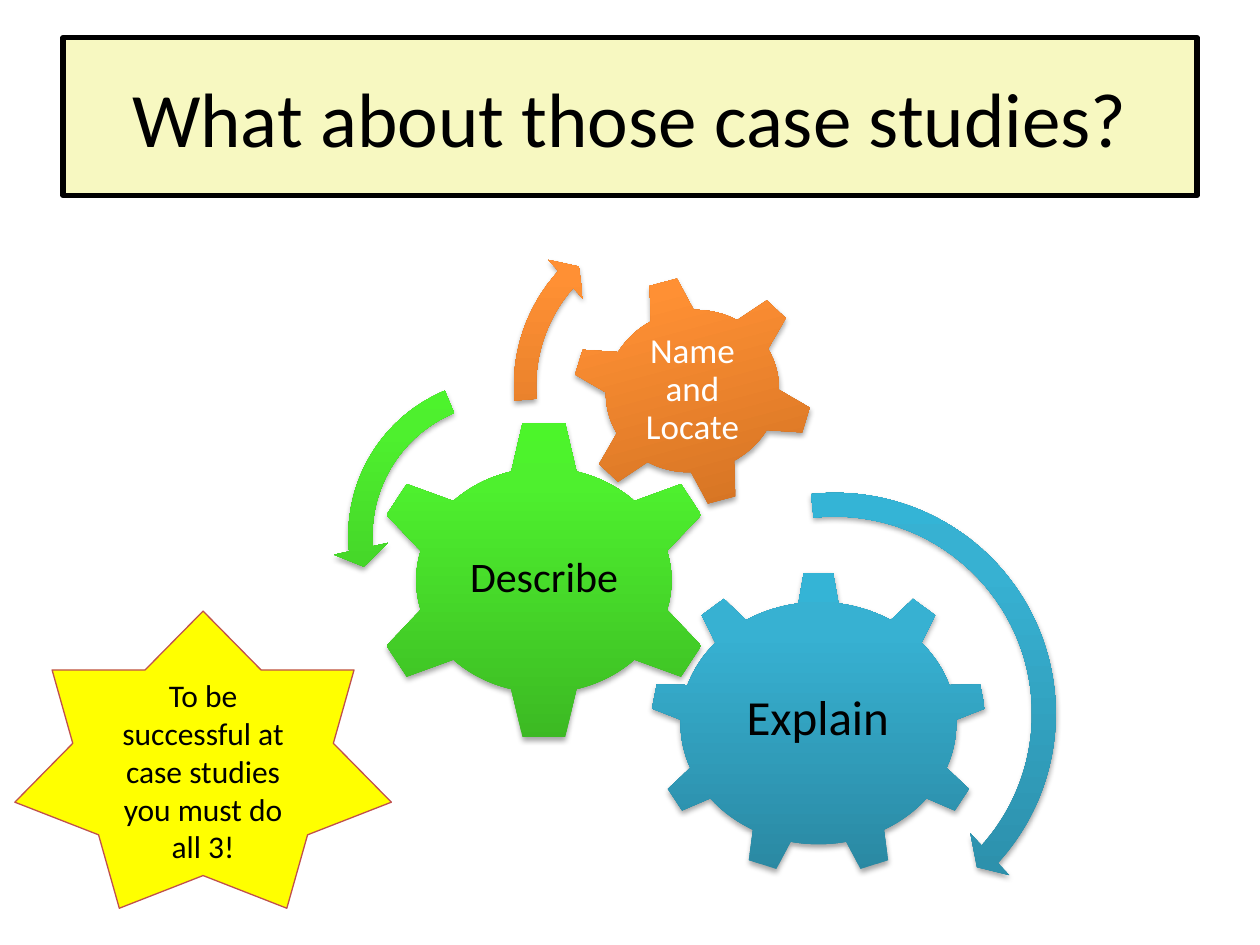
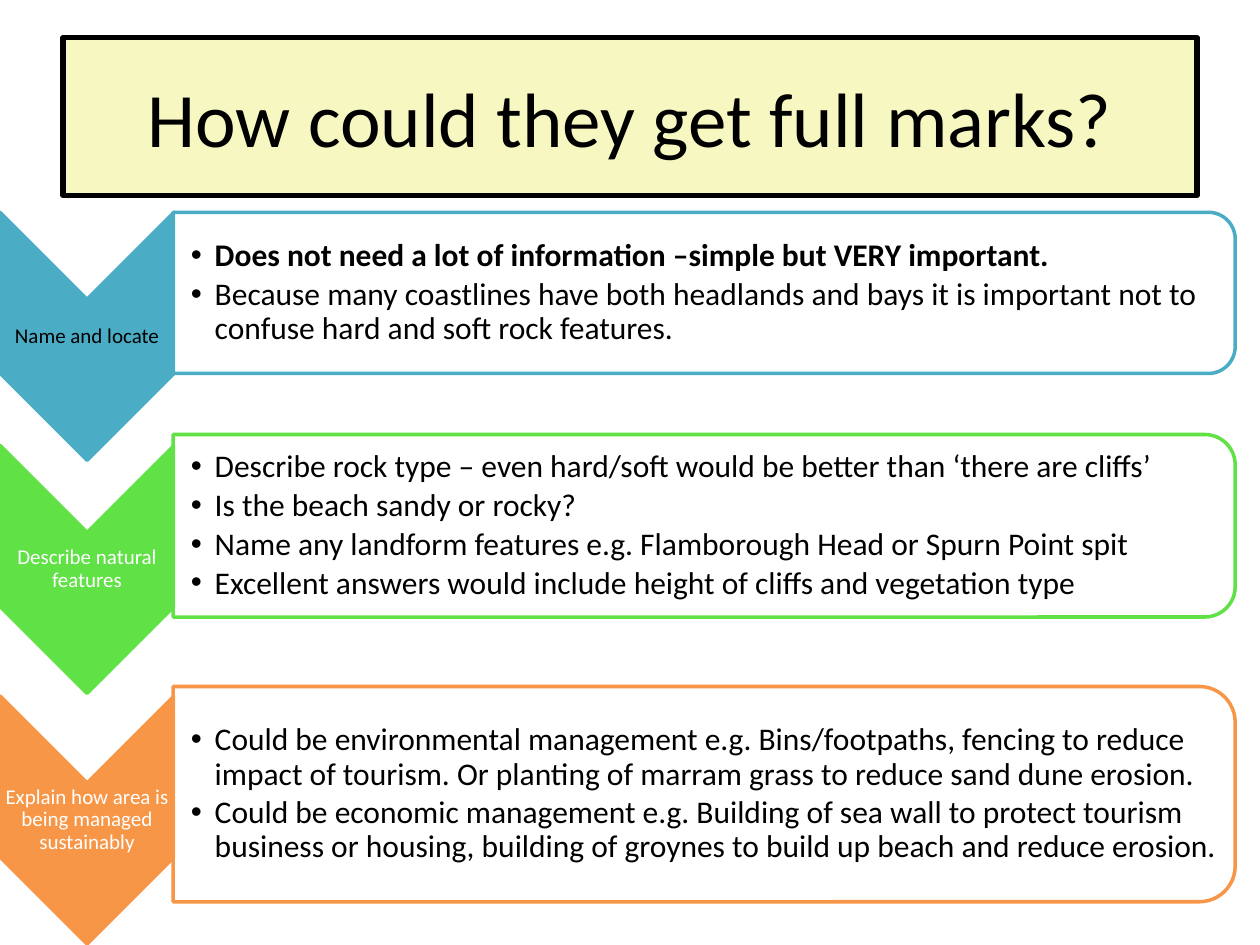
from copy import deepcopy

from pptx import Presentation
from pptx.dml.color import RGBColor
from pptx.enum.shapes import MSO_SHAPE
from pptx.enum.text import MSO_ANCHOR, PP_ALIGN
from pptx.oxml.ns import qn
from pptx.oxml.xmlchemy import OxmlElement
from pptx.util import Cm, Pt

BLACK = RGBColor(0x00, 0x00, 0x00)
WHITE = RGBColor(0xFF, 0xFF, 0xFF)
CREAM = RGBColor(0xF2, 0xF4, 0x96)
YELLOW = RGBColor(0xFF, 0xFF, 0x00)
RED = RGBColor(0xC0, 0x50, 0x4D)
TEAL = RGBColor(0x4B, 0xAC, 0xC6)
GREEN = RGBColor(0x60, 0xE1, 0x46)
ORANGE = RGBColor(0xF7, 0x96, 0x46)

# Gradients run from the bottom of a shape to its top
GRADIENT_POSITIONS = (0, 0.8, 1)
TEAL_SHADES = (RGBColor(0x2A, 0x88, 0xA2), RGBColor(0x37, 0xB1, 0xD2), RGBColor(0x34, 0xB4, 0xD6))
GREEN_SHADES = (RGBColor(0x3C, 0xB9, 0x23), RGBColor(0x4E, 0xF0, 0x2E), RGBColor(0x4C, 0xF5, 0x2A))
ORANGE_SHADES = (RGBColor(0xCC, 0x6E, 0x20), RGBColor(0xFF, 0x90, 0x34), RGBColor(0xFF, 0x91, 0x36))

FONT = "Calibri"
TITLE_BOX = (1.27, 0.76, 22.86, 3.18)
CHEVRON_WIDTH, CHEVRON_HEIGHT = 3.51, 5
LABEL_OFFSET, LABEL_HEIGHT = 1.75, 1.5
CARD_LEFT, CARD_WIDTH = 3.49, 21.41
LIST_WIDTH, LIST_INSET = 21.2, 0.18

# Gear shape, box, rotation, shades, label, label box, size, colour, inset
GEARS = [
    (MSO_SHAPE.GEAR_9, (13.11, 11.53, 6.78, 6.1), 0, TEAL_SHADES,
     "Explain", (14.4, 12.95, 4.17, 3.12), 28, BLACK, 0.1),
    (MSO_SHAPE.GEAR_6, (7.42, 8.46, 7.09, 6.48), 0, GREEN_SHADES,
     "Describe", (9.14, 10.08, 3.66, 3.2), 24, BLACK, 0.08),
    (MSO_SHAPE.GEAR_6, (11.51, 5.56, 4.9, 4.65), 345, ORANGE_SHADES,
     "Name and Locate", (12.6, 6.55, 2.72, 2.64), 20, WHITE, 0.08),
]

# Arrow shape, left, top, diameter, adjustments, shades
ARROWS = [
    (MSO_SHAPE.CIRCULAR_ARROW, 12.04, 9.6, 9.58, (0.05, 2.99, 25.31, 158.3, 0.06), TEAL_SHADES),
    (MSO_SHAPE.LEFT_CIRCULAR_ARROW, 6.71, 7.32, 6.96, (0.07, 4.3, 104.89, 148.38, 0.08), GREEN_SHADES),
    (MSO_SHAPE.CIRCULAR_ARROW, 10.06, 4.04, 7.49, (0.06, 3.94, 133.14, 105.08, 0.07), ORANGE_SHADES),
]

# Chevron top, card top, card height, colour, label, label colour, points as (text, bold)
STEPS = [
    (4.28, 4.28, 3.25, TEAL, "Name and locate", BLACK, [
        ("Does not need a lot of information –simple but VERY important.", True),
        ("Because many coastlines have both headlands and bays it is important "
         "not to confuse hard and soft rock features.", False),
    ]),
    (8.98, 8.76, 3.68, GREEN, "Describe natural features", WHITE, [
        ("Describe rock type – even hard/soft would be better than ‘there are cliffs’", False),
        ("Is the beach sandy or rocky?", False),
        ("Name any landform features e.g. Flamborough Head or Spurn Point spit", False),
        ("Excellent answers would include height of cliffs and vegetation type", False),
    ]),
    (14.03, 13.84, 4.34, ORANGE, "Explain how area is being managed sustainably", WHITE, [
        ("Could be environmental management e.g. Bins/footpaths, fencing to reduce impact "
         "of tourism. Or planting of marram grass to reduce sand dune erosion.", False),
        ("Could be economic management e.g. Building of sea wall to protect tourism business "
         "or housing, building of groynes to build up beach and reduce erosion.", False),
    ]),
]


def set_all(target, values):
    for name, value in values.items():
        setattr(target, name, value)


def add_child(parent, tag, **attributes):
    child = OxmlElement(tag)
    for name, value in attributes.items():
        child.set(name, str(value))
    parent.append(child)
    return child


def paint(shape, fill, line=None, width=0, opacity=100):
    shape.fill.solid()
    shape.fill.fore_color.rgb = fill
    if opacity < 100:
        colour = shape.element.spPr.find(qn("a:solidFill"))[0]
        add_child(colour, "a:alpha", val=opacity * 1000)
    if line is None:
        shape.line.fill.background()
    else:
        shape.line.color.rgb = line
        shape.line.width = Pt(width)


def paint_gradient(shape, shades):
    shape.fill.gradient()
    shape.fill.gradient_angle = 90
    stops = shape.element.spPr.find(".//" + qn("a:gsLst"))
    stops.insert(1, deepcopy(stops[0]))
    for stop, position, shade in zip(shape.fill.gradient_stops, GRADIENT_POSITIONS, shades):
        stop.position = position
        stop.color.rgb = shade
    shape.line.fill.background()


def add_soft_shadow(shape):
    effects = shape.element.spPr.find(qn("a:effectLst"))
    shadow = add_child(effects, "a:outerShdw", blurRad=Pt(3.1), dist=Pt(1.8),
                       dir=90 * 60000, rotWithShape=0)
    colour = add_child(shadow, "a:srgbClr", val=BLACK)
    add_child(colour, "a:alpha", val=35000)


def add_plain_shape(page, kind, box):
    shape = page.shapes.add_shape(kind, *map(Cm, box))
    shape.shadow.inherit = False
    return shape


def add_glossy_shape(page, kind, box, shades):
    shape = add_plain_shape(page, kind, box)
    paint_gradient(shape, shades)
    add_soft_shadow(shape)
    return shape


def add_turned_shape(page, kind, box):
    """Add a shape turned by 90 degrees that covers the given box."""
    left, top, width, height = box
    shift = (width - height) / 2
    shape = add_plain_shape(page, kind, (left + shift, top - shift, height, width))
    shape.rotation = 90
    return shape


def write(para, text, size, colour, bold=False):
    span = para.add_run()
    span.text = text
    set_all(span.font, {"name": FONT, "size": Pt(size), "bold": bold})
    span.font.color.rgb = colour


def space_lines(para, after_percent):
    para.line_spacing = 0.9
    after = add_child(para._p.get_or_add_pPr(), "a:spcAft")
    add_child(after, "a:spcPct", val=after_percent * 1000)


def add_text_frame(page, box, inset, left_inset=None):
    frame = page.shapes.add_textbox(*map(Cm, box)).text_frame
    set_all(frame, {
        "word_wrap": True,
        "vertical_anchor": MSO_ANCHOR.MIDDLE,
        "margin_left": Cm(left_inset or inset),
        "margin_top": Cm(inset),
        "margin_right": Cm(inset),
        "margin_bottom": Cm(inset),
    })
    return frame


def add_label(page, box, text, size, colour, inset):
    para = add_text_frame(page, box, inset).paragraphs[0]
    para.alignment = PP_ALIGN.CENTER
    space_lines(para, 35)
    write(para, text, size, colour)


def add_bullets(page, box, points):
    frame = add_text_frame(page, box, 0.03, left_inset=0.36)
    for index, (text, bold) in enumerate(points):
        para = frame.paragraphs[0] if index == 0 else frame.add_paragraph()
        para.level = 1
        space_lines(para, 15)
        properties = para._p.get_or_add_pPr()
        properties.set("marL", str(Cm(0.48)))
        properties.set("indent", str(-Cm(0.48)))
        add_child(properties, "a:buFont", typeface="Arial")
        add_child(properties, "a:buChar", char="•")
        write(para, text, 18, BLACK, bold)


def add_page(deck, title):
    page = deck.slides.add_slide(deck.slide_layouts[5])
    band = page.shapes.title
    set_all(band, dict(zip(("left", "top", "width", "height"), map(Cm, TITLE_BOX))))
    paint(band, CREAM, BLACK, 3, opacity=59)
    band.text_frame.vertical_anchor = MSO_ANCHOR.MIDDLE
    para = band.text_frame.paragraphs[0]
    para.alignment = PP_ALIGN.CENTER
    write(para, title, 44, BLACK)
    return page


def add_gear(page, kind, box, rotation, shades, text, text_box, size, colour, inset):
    add_glossy_shape(page, kind, box, shades).rotation = rotation
    add_label(page, text_box, text, size, colour, inset)


def add_round_arrow(page, kind, left, top, diameter, adjustments, shades):
    arrow = add_glossy_shape(page, kind, (left, top, diameter, diameter), shades)
    for index, value in enumerate(adjustments):
        arrow.adjustments[index] = value


def add_star(page, box, text):
    star = add_plain_shape(page, MSO_SHAPE.STAR_7_POINT, box)
    paint(star, YELLOW, RED, 0.75)
    star.text_frame.word_wrap = True
    star.text_frame.vertical_anchor = MSO_ANCHOR.TOP
    para = star.text_frame.paragraphs[0]
    para.alignment = PP_ALIGN.CENTER
    write(para, text, 18, BLACK)


def add_step(page, top, card_top, card_height, colour, label, label_colour, points):
    chevron = add_turned_shape(page, MSO_SHAPE.CHEVRON, (0, top, CHEVRON_WIDTH, CHEVRON_HEIGHT))
    paint(chevron, colour, colour, 2)
    label_box = (0, top + LABEL_OFFSET, CHEVRON_WIDTH, LABEL_HEIGHT)
    add_label(page, label_box, label, 12, label_colour, 0.03)
    card = add_turned_shape(page, MSO_SHAPE.ROUND_2_SAME_RECTANGLE,
                            (CARD_LEFT, card_top, CARD_WIDTH, card_height))
    paint(card, WHITE, colour, 2, opacity=90)
    list_box = (CARD_LEFT, card_top + LIST_INSET, LIST_WIDTH, card_height - 2 * LIST_INSET)
    add_bullets(page, list_box, points)


def main():
    deck = Presentation()
    deck.slide_width, deck.slide_height = Cm(25.4), Cm(19.05)

    page = add_page(deck, "What about those case studies?")
    for gear in GEARS:
        add_gear(page, *gear)
    for arrow in ARROWS:
        add_round_arrow(page, *arrow)
    add_star(page, (0.3, 12.32, 7.59, 5.99), "To be successful at case studies you must do all 3!")

    page = add_page(deck, "How could they get full marks?")
    for step in STEPS:
        add_step(page, *step)

    deck.save("out.pptx")


if __name__ == "__main__":
    main()
